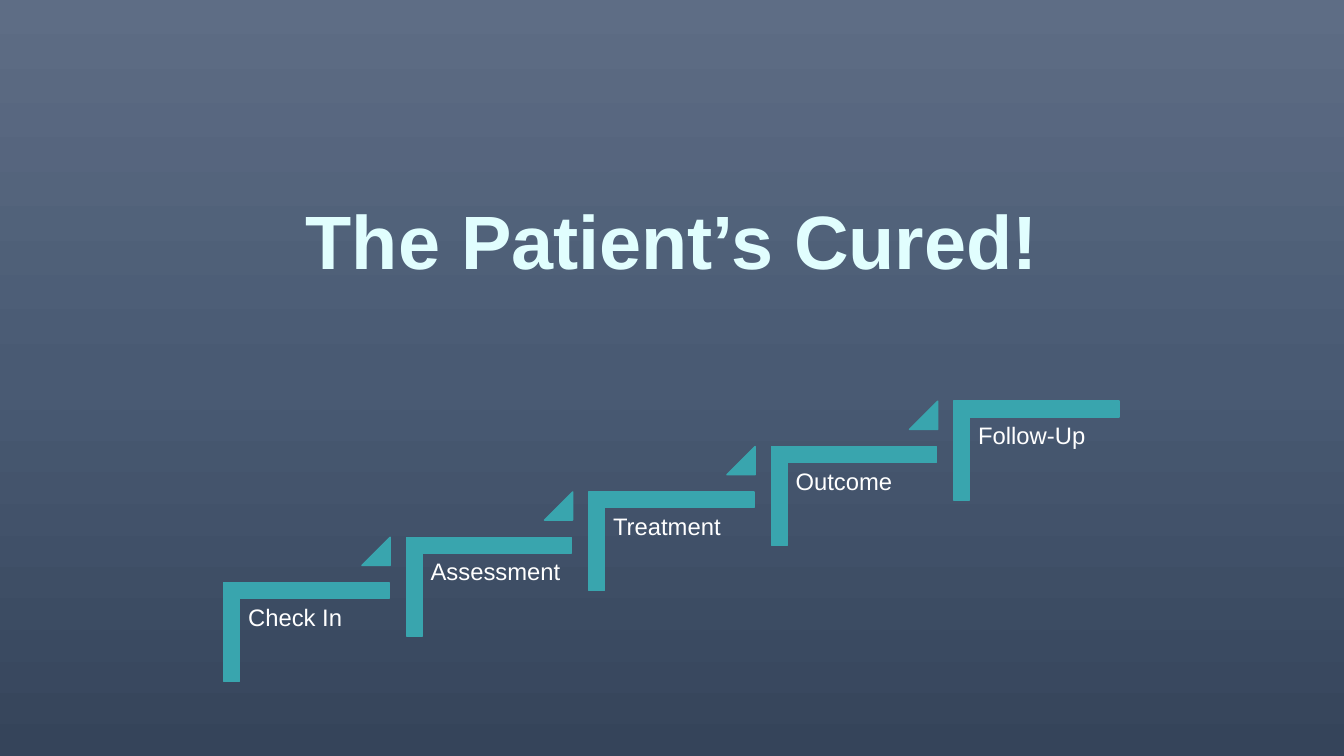
"""Build the closing slide: a title above a rising staircase of patient steps."""
from copy import deepcopy

from pptx import Presentation, util as u
from pptx.dml.color import RGBColor
from pptx.enum import shapes, text
from pptx.oxml.ns import qn

PX = 9144
TEAL = RGBColor(0x39, 0xA5, 0xAE)
WHITE = RGBColor(0xFF, 0xFF, 0xFF)
ICE = RGBColor(0xE1, 0xFE, 0xFE)
SKY = (
    RGBColor(0x5E, 0x6D, 0x85),
    RGBColor(0x49, 0x5A, 0x73),
    RGBColor(0x35, 0x44, 0x5A),
)
STEPS = ("Check In", "Assessment", "Treatment", "Outcome", "Follow-Up")
RUN, RISE = 181, 45


def px(*lengths):
    return [u.Emu(length * PX) for length in lengths]


def paint_background(slide):
    fill = slide.background.fill
    fill.gradient()
    fill.gradient_angle = 270
    stops = slide.element.find(".//" + qn("a:gsLst"))
    stops.insert(1, deepcopy(stops[0]))
    for stop, position, color in zip(fill.gradient_stops, (0, 0.5, 1), SKY):
        stop.position = position
        stop.color.rgb = color


def write(frame, words, size, color, bold=False, align=text.PP_ALIGN.LEFT,
          anchor=text.MSO_ANCHOR.TOP, inset=7, spacing=1.0):
    frame.word_wrap = True
    frame.auto_size = text.MSO_AUTO_SIZE.NONE
    frame.vertical_anchor = anchor
    frame.margin_left, frame.margin_top = px(inset, inset)
    frame.margin_right, frame.margin_bottom = px(inset, inset)
    line = frame.paragraphs[0]
    line.alignment = align
    line.line_spacing = spacing
    run = line.add_run()
    run.text = words
    run.font.name = "Arial"
    run.font.size = u.Pt(size)
    run.font.bold = bold
    run.font.color.rgb = color


def add_teal(slide, preset, box, adjustments, rotation=0):
    piece = slide.shapes.add_shape(preset, *px(*box))
    piece.shadow.inherit = False
    piece.rotation = rotation
    for index, value in enumerate(adjustments):
        piece.adjustments[index] = value
    piece.fill.solid()
    piece.fill.fore_color.rgb = TEAL
    piece.line.color.rgb = TEAL
    piece.line.width = u.Pt(1)


def add_step(slide, label, left, top, leads_on):
    add_teal(slide, shapes.MSO_SHAPE.CORNER, (left, top, 98, 164),
             (0.161, 0.161), rotation=90)
    caption = slide.shapes.add_textbox(*px(left - 16, top + 49, 148, 130))
    write(caption.text_frame, label, 17, WHITE, spacing=0.9)
    if leads_on:
        add_teal(slide, shapes.MSO_SHAPE.ISOSCELES_TRIANGLE,
                 (left + 104, top - 12, 28, 28), (1,))


def main():
    deck = Presentation()
    deck.slide_width, deck.slide_height = px(1333, 750)
    slide = deck.slides.add_slide(deck.slide_layouts[5])
    paint_background(slide)
    title = slide.shapes.title
    title.left, title.top, title.width, title.height = px(267, 187, 799, 101)
    write(title.text_frame, "The Patient’s Cured!", 54, ICE, bold=True,
          align=text.PP_ALIGN.CENTER, anchor=text.MSO_ANCHOR.MIDDLE, inset=5)
    for index, label in enumerate(STEPS):
        add_step(slide, label, 255 + RUN * index, 545 - RISE * index,
                 leads_on=label != STEPS[-1])
    deck.save("out.pptx")


if __name__ == "__main__":
    main()
